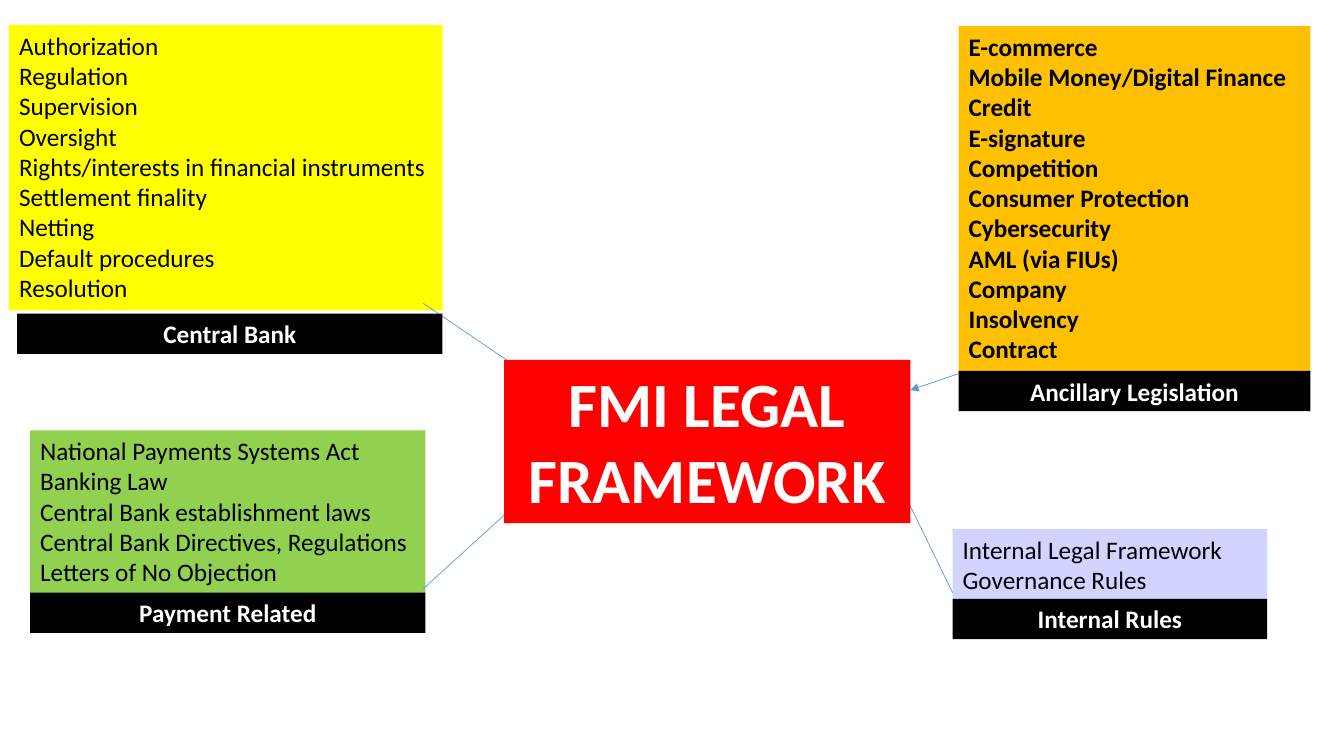
from dataclasses import dataclass

from lxml.etree import SubElement
from pptx import Presentation
from pptx.dml.color import RGBColor
from pptx.enum.shapes import MSO_CONNECTOR
from pptx.enum.text import MSO_AUTO_SIZE, PP_ALIGN
from pptx.oxml.ns import qn
from pptx.util import Inches, Pt


@dataclass(frozen=True)
class Theme:
    font: str = "Calibri"
    body_size: int = 18
    title_size: int = 45
    line_width: float = 0.5
    dark: str = "000000"
    light: str = "FFFFFF"
    central: str = "FF0000"
    bank: str = "FFFF00"
    ancillary: str = "FFC000"
    payment: str = "92D050"
    internal: str = "D3D3FF"
    line: str = "5B9BD5"


T = Theme()
WIDTH, HEIGHT = Inches(13.33), Inches(7.5)
CAPTION_HEIGHT = 5.33  # boxes and points are percentages of the slide

# Each box holds a body with its caption at the foot; gap lies between the two.
CARDS = [
    dict(box=(0.68, 3.33, 32.25, 43.47), fill=T.bank, caption="Central Bank",
         gap=0.4, inset=0.6,
         lines=["Authorization", "Regulation", "Supervision", "Oversight",
                "Rights/interests in financial instruments", "Settlement finality",
                "Netting", "Default procedures", "Resolution"]),
    dict(box=(71.33, 3.47, 26.18, 50.93), fill=T.ancillary, bold=True,
         caption="Ancillary Legislation",
         lines=["E-commerce", "Mobile Money/Digital Finance", "Credit", "E-signature",
                "Competition", "Consumer Protection", "Cybersecurity", "AML (via FIUs)",
                "Company", "Insolvency", "Contract"]),
    dict(box=(2.25, 56.93, 29.4, 26.8), fill=T.payment, caption="Payment Related",
         lines=["National Payments Systems Act", "Banking Law",
                "Central Bank establishment laws",
                "Central Bank Directives, Regulations", "Letters of No Objection"]),
    dict(box=(70.88, 70, 23.4, 14.53), fill=T.internal, caption="Internal Rules",
         gap=-0.27, lines=["Internal Legal Framework Governance Rules"]),
]
ARROWS = [
    ((31.5, 77.87), (40.65, 63.07)),
    ((31.5, 40.13), (40.65, 51.2)),
    ((71.48, 49.33), (67.73, 51.6)),
    ((70.88, 78.4), (66.23, 61.47)),
]


def to_emu(shares):
    """Turn alternating horizontal and vertical percentages into lengths."""
    return [int(v * (HEIGHT if i % 2 else WIDTH) / 100) for i, v in enumerate(shares)]


def add_panel(s, box, lines, fill, color=T.dark, size=T.body_size, bold=False,
              align=PP_ALIGN.LEFT):
    sp = s.shapes.add_textbox(*to_emu(box))
    sp.fill.solid()
    sp.fill.fore_color.rgb = RGBColor.from_string(fill)
    tf = sp.text_frame
    tf.word_wrap = True
    tf.auto_size = MSO_AUTO_SIZE.SHAPE_TO_FIT_TEXT
    for i, line in enumerate(lines):
        p = tf.add_paragraph() if i else tf.paragraphs[0]
        p.alignment = align
        r = p.add_run()
        r.text = line
        for name, value in dict(name=T.font, size=Pt(size), bold=bold).items():
            setattr(r.font, name, value)
        r.font.color.rgb = RGBColor.from_string(color)


def add_heading(s, box, text, fill, size):
    add_panel(s, box, [text], fill, T.light, size, True, PP_ALIGN.CENTER)


def add_card_body(s, box, lines, fill, caption, bold=False, gap=-0.13, inset=0):
    x, y, w, h = box
    add_panel(s, (x, y, w, h - CAPTION_HEIGHT - gap), lines, fill, bold=bold)


def add_card_caption(s, box, caption, inset=0, **body):
    x, y, w, h = box
    foot = (x + inset, y + h - CAPTION_HEIGHT, w - inset, CAPTION_HEIGHT)
    add_heading(s, foot, caption, T.dark, T.body_size)


def add_arrow(s, start, end):
    cx = s.shapes.add_connector(MSO_CONNECTOR.STRAIGHT, *to_emu(start + end))
    cx.line.color.rgb = RGBColor.from_string(T.line)
    cx.line.width = Pt(T.line_width)
    SubElement(cx.line._get_or_add_ln(), qn("a:tailEnd"), type="triangle")
    SubElement(cx._element.spPr, qn("a:effectLst"))


def build_framework_slide(prs):
    """Lay captions and the central title over the arrows, and arrows over the bodies."""
    s = prs.slides.add_slide(prs.slide_layouts[6])
    for card in CARDS:
        add_card_body(s, **card)
    for start, end in ARROWS:
        add_arrow(s, start, end)
    add_heading(s, (37.5, 47.6, 30.23, 21.6), "FMI LEGAL FRAMEWORK", T.central, T.title_size)
    for card in CARDS:
        add_card_caption(s, **card)


def main():
    prs = Presentation()
    prs.slide_width, prs.slide_height = WIDTH, HEIGHT
    build_framework_slide(prs)
    prs.save("out.pptx")


if __name__ == "__main__":
    main()
